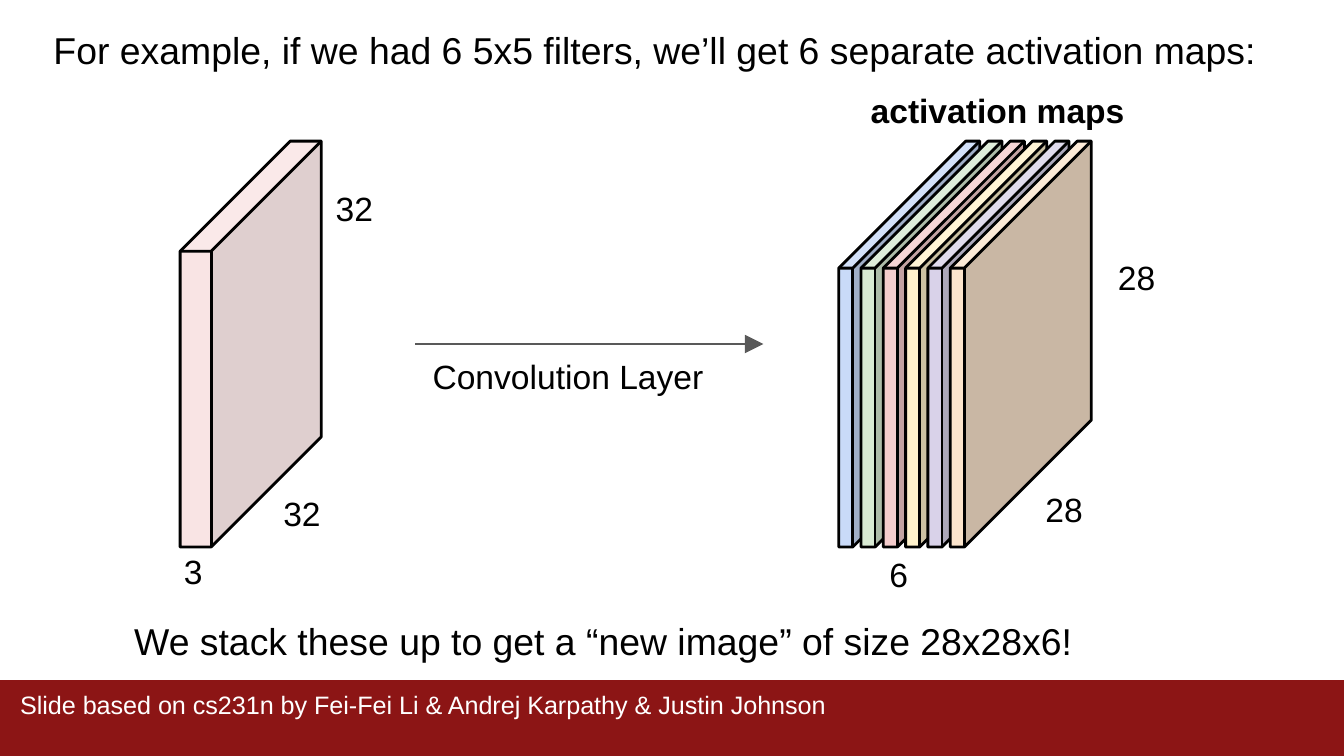
from lxml.etree import SubElement
from pptx import Presentation
from pptx.dml.color import RGBColor
from pptx.enum.shapes import MSO_CONNECTOR as Connector, MSO_SHAPE as Preset
from pptx.oxml.ns import qn
from pptx.util import Inches, Pt

THEME = {
    "font": "Arial",
    "ink": "000000",
    "paper": "FFFFFF",
    "banner": "8C1515",
    "arrow": "595959",
    "input": "F4CCCC",
    "maps": ["C9DAF8", "D9EAD3", "F4CCCC", "FFF2CC", "D9D2E9", "FCE5CD"],
    "sentence": 20,
    "label": 18,
    "credit": 13.5,
    "outline": 1.5,
    "arrow_width": 0.75,
}

SENTENCES = [
    ("For example, if we had 6 5x5 filters, we’ll get 6 separate activation maps:", (0.3, 0.1, 9.54, 0.42)),
    ("We stack these up to get a “new image” of size 28x28x6!", (0.9, 4.5, 9.43, 0.31)),
]
LABELS = [
    ("32", (2.01, 3.57, 0.54, 0.34)),
    ("32", (2.4, 1.3, 0.54, 0.31)),
    ("3", (1.27, 4, 0.54, 0.2)),
    ("Convolution Layer", (3.12, 2.55, 3.58, 0.89)),
    ("6", (6.52, 4.02, 0.36, 0.34)),
    ("28", (7.68, 3.54, 0.54, 0.34)),
    ("28", (8.22, 1.81, 0.54, 0.34)),
]
HEADING = ("activation maps", (6.38, 0.57, 2.26, 0.59))
CREDIT = ("Slide based on cs231n by Fei-Fei Li & Andrej Karpathy & Justin Johnson", (0.08, 5.06, 9.8, 0.59))
SLIDE_WIDTH = 10
SLIDE_HEIGHT = SLIDE_WIDTH * 9 / 16
BANNER_TOP = 5.06
ARROW = (3.09, 2.56, 5.68, 2.56)
CUBE_TOP, CUBE_WIDTH, CUBE_HEIGHT = 1.05, 1.05, 3.02
INPUT_LEFT, INPUT_DEPTH, INPUT_OPACITY = 1.34, 0.78, 52
MAPS_LEFT, MAPS_LAST_LEFT, MAPS_DEPTH = 6.24, 7.07, 0.9


def inches(values):
    return [Inches(value) for value in values]


def color(name):
    return RGBColor.from_string(name)


def set_values(target, values):
    for name, value in values.items():
        setattr(target, name, value)


def add_text(slide, content, size, ink=THEME["ink"], bold=False, inset=0.1):
    text, box = content
    frame = slide.shapes.add_textbox(*inches(box)).text_frame
    margins = {f"margin_{side}": Inches(inset) for side in ("left", "top", "right", "bottom")}
    set_values(frame, {"word_wrap": True, **margins})
    run = frame.paragraphs[0].add_run()
    run.text = text
    set_values(run.font, {"name": THEME["font"], "size": Pt(size), "bold": bold})
    run.font.color.rgb = color(ink)


def add_solid(slide, preset, box, fill):
    shape = slide.shapes.add_shape(preset, *inches(box))
    shape.shadow.inherit = False
    shape.fill.solid()
    shape.fill.fore_color.rgb = color(fill)
    shape.line.fill.background()
    return shape


def add_cube(slide, left, depth, fill, opacity=100):
    cube = add_solid(slide, Preset.CUBE, (left, CUBE_TOP, CUBE_WIDTH, CUBE_HEIGHT), fill)
    cube.adjustments[0] = depth
    cube.line.color.rgb = color(THEME["ink"])
    cube.line.width = Pt(THEME["outline"])
    if opacity < 100:
        tint = cube._element.spPr.find(qn("a:solidFill"))[0]
        SubElement(tint, qn("a:alpha"), val=str(opacity * 1000))


def add_arrow(slide):
    arrow = slide.shapes.add_connector(Connector.STRAIGHT, *inches(ARROW))
    arrow.line.color.rgb = color(THEME["arrow"])
    arrow.line.width = Pt(THEME["arrow_width"])
    outline = arrow._element.spPr.find(qn("a:ln"))
    SubElement(outline, qn("a:tailEnd"), type="triangle", w="lg", len="lg")
    SubElement(arrow._element.spPr, qn("a:effectLst"))


def main():
    """Build the slide on stacking activation maps from a convolution layer."""
    presentation = Presentation()
    set_values(presentation, {"slide_width": Inches(SLIDE_WIDTH), "slide_height": Inches(SLIDE_HEIGHT)})
    slide = presentation.slides.add_slide(presentation.slide_layouts[6])
    banner = (0, BANNER_TOP, SLIDE_WIDTH, SLIDE_HEIGHT - BANNER_TOP)
    add_solid(slide, Preset.RECTANGLE, banner, THEME["banner"])
    add_text(slide, CREDIT, THEME["credit"], ink=THEME["paper"], inset=0.07)
    add_cube(slide, INPUT_LEFT, INPUT_DEPTH, THEME["input"], INPUT_OPACITY)
    step = (MAPS_LAST_LEFT - MAPS_LEFT) / (len(THEME["maps"]) - 1)
    for index, fill in enumerate(THEME["maps"]):
        add_cube(slide, MAPS_LEFT + index * step, MAPS_DEPTH, fill)
    add_arrow(slide)
    for label in LABELS:
        add_text(slide, label, THEME["label"])
    add_text(slide, HEADING, THEME["label"], bold=True)
    for sentence in SENTENCES:
        add_text(slide, sentence, THEME["sentence"])
    presentation.save("out.pptx")


if __name__ == "__main__":
    main()
